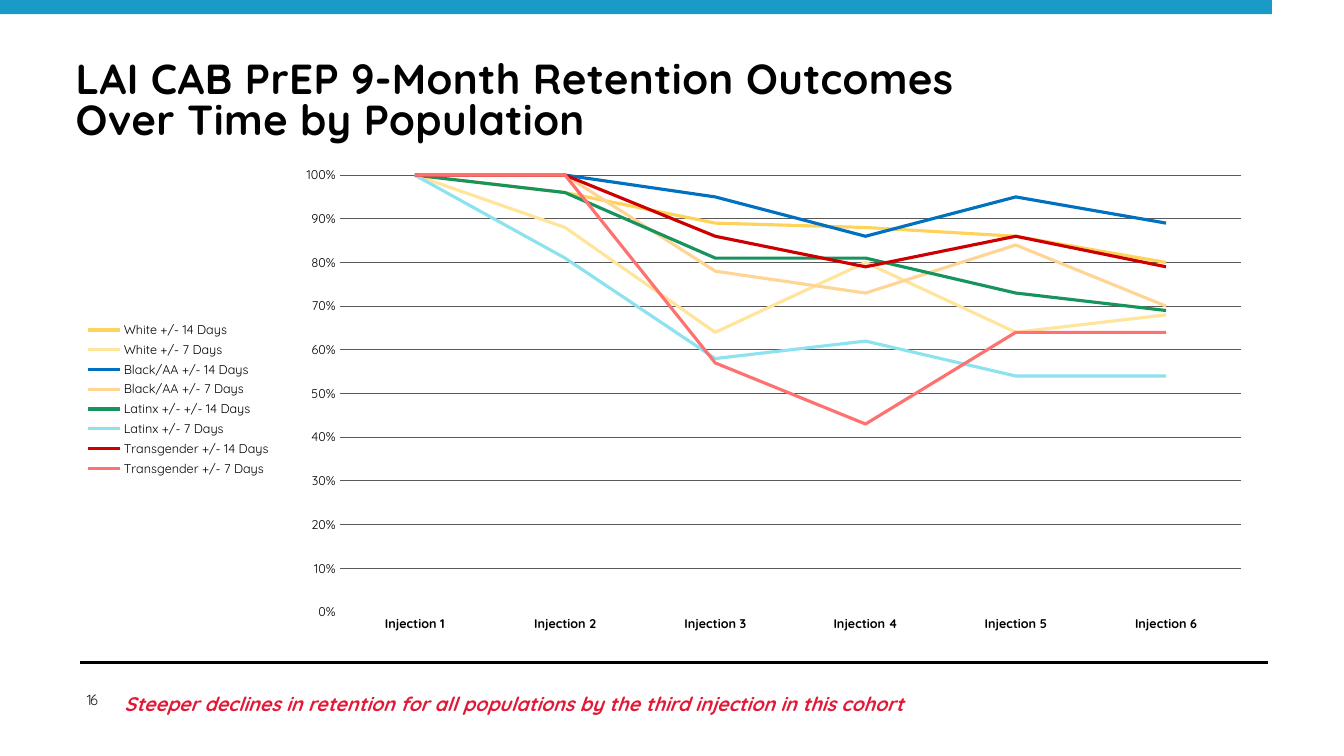
from lxml import etree
from pptx import Presentation
from pptx import util as u
from pptx.chart.data import CategoryChartData
from pptx.dml.color import RGBColor
from pptx.enum import chart as charts, shapes, text
from pptx.oxml import parse_xml
from pptx.oxml.ns import nsdecls, qn

FONT = "Quicksand"
BLACK = RGBColor(0x00, 0x00, 0x00)
WHITE = RGBColor(0xFF, 0xFF, 0xFF)
BAR_BLUE = RGBColor(0x1A, 0x9A, 0xC7)
NUMBER_GREY = RGBColor(0x1F, 0x1F, 0x1F)
GRID_GREY = RGBColor(0x59, 0x59, 0x59)
MESSAGE_RED = RGBColor(0xE3, 0x18, 0x36)
GOLD = RGBColor(0xFF, 0xD3, 0x59)
PALE_GOLD = RGBColor(0xFF, 0xE5, 0x9B)
BLUE = RGBColor(0x00, 0x70, 0xC0)
PEACH = RGBColor(0xFF, 0xD5, 0x96)
GREEN = RGBColor(0x17, 0x93, 0x5E)
AQUA = RGBColor(0x8D, 0xE2, 0xEF)
RED = RGBColor(0xCC, 0x00, 0x00)
CORAL = RGBColor(0xFF, 0x71, 0x71)

RETENTION = [
    ("White +/- 14 Days", GOLD, (1, 0.96, 0.89, 0.88, 0.86, 0.8)),
    ("White +/- 7 Days", PALE_GOLD, (1, 0.88, 0.64, 0.8, 0.64, 0.68)),
    ("Black/AA +/- 14 Days", BLUE, (1, 1, 0.95, 0.86, 0.95, 0.89)),
    ("Black/AA +/- 7 Days", PEACH, (1, 1, 0.78, 0.73, 0.84, 0.7)),
    ("Latinx +/- +/- 14 Days", GREEN, (1, 0.96, 0.81, 0.81, 0.73, 0.69)),
    ("Latinx +/- 7 Days", AQUA, (1, 0.81, 0.58, 0.62, 0.54, 0.54)),
    ("Transgender +/- 14 Days", RED, (1, 1, 0.86, 0.79, 0.86, 0.79)),
    ("Transgender +/- 7 Days", CORAL, (1, 1, 0.57, 0.43, 0.64, 0.64)),
]


def style_font(font, size, color, bold=False, italic=False):
    font.name = FONT
    font.size = u.Pt(size)
    font.color.rgb = color
    font.bold = bold
    font.italic = italic


def add_text(page, words, left, top, width, height, inset_top=0):
    box = page.shapes.add_textbox(u.Pt(left), u.Pt(top), u.Pt(width), u.Pt(height))
    frame = box.text_frame
    frame.word_wrap = True
    frame.margin_left = frame.margin_right = frame.margin_bottom = u.Pt(0)
    frame.margin_top = u.Pt(inset_top)
    para = frame.paragraphs[0]
    para.text = words
    return frame, para


deck = Presentation()
deck.slide_width, deck.slide_height = u.Pt(960), u.Pt(540)
page = deck.slides.add_slide(deck.slide_layouts[6])

# Top bar
bar = page.shapes.add_shape(
    shapes.MSO_SHAPE.RECTANGLE, u.Pt(0), u.Pt(0), u.Pt(908.6), u.Pt(10.1))
bar.shadow.inherit = False
bar.fill.solid()
bar.fill.fore_color.rgb = BAR_BLUE
bar.line.fill.background()

# Footer rule
rule = page.shapes.add_connector(
    shapes.MSO_CONNECTOR.STRAIGHT, u.Pt(57), u.Pt(473), u.Pt(906), u.Pt(473))
rule.line.color.rgb = BLACK
rule.line.width = u.Pt(2)
etree.SubElement(rule._element.spPr, qn("a:effectLst"))

# Slide number
frame, para = add_text(page, "16", 57, 490.3, 18, 18.7)
frame.word_wrap = False
frame.vertical_anchor = text.MSO_ANCHOR.MIDDLE
para.alignment = text.PP_ALIGN.CENTER
style_font(para.font, 10.5, NUMBER_GREY)
para.runs[0]._r.get_or_add_rPr().set("spc", "-100")

# Title
frame, para = add_text(
    page, "LAI CAB PrEP 9-Month Retention Outcomes\vOver Time by Population",
    54, 36.7, 852, 83.5, inset_top=7.2)
para.line_spacing = u.Pt(29.3)
style_font(para.font, 30, BLACK, bold=True)
for span in para.runs:
    span._r.get_or_add_rPr().set("spc", "30")

# Key message
frame, para = add_text(
    page, "Steeper declines in retention for all populations by the third injection in this cohort",
    88.8, 491, 727, 24.5, inset_top=3.6)
style_font(para.font, 14, MESSAGE_RED, bold=True, italic=True)

# Retention chart
data = CategoryChartData(number_format="0%")
data.categories = [f"Injection {number}" for number in range(1, 7)]
for name, color, values in RETENTION:
    data.add_series(name, values)
chart = page.shapes.add_chart(
    charts.XL_CHART_TYPE.LINE, u.Pt(54), u.Pt(112.3), u.Pt(849.6), u.Pt(345.6), data).chart
chart.has_title = False
style_font(chart.font, 10, BLACK)
chart.plots[0].vary_by_categories = False
for series, (name, color, values) in zip(chart.plots[0].series, RETENTION):
    series.smooth = False
    series.marker.style = charts.XL_MARKER_STYLE.NONE
    series.format.line.color.rgb = color
    series.format.line.width = u.Pt(2.25)

# Legend
chart.has_legend = True
chart.legend.position = charts.XL_LEGEND_POSITION.LEFT
chart.legend.include_in_layout = False
style_font(chart.legend.font, 9, BLACK)

# Axes
injections, share = chart.category_axis, chart.value_axis
for axis in (injections, share):
    axis.major_tick_mark = axis.minor_tick_mark = charts.XL_TICK_MARK.NONE
    style_font(axis.tick_labels.font, 9, BLACK, bold=axis is injections)
injections.format.line.color.rgb = WHITE
injections.format.line.width = u.Pt(0.75)
share.minimum_scale, share.maximum_scale, share.major_unit = 0, 1, 0.1
share.tick_labels.number_format = "0%"
share.tick_labels.number_format_is_linked = False
share.format.line.fill.background()
share.has_major_gridlines = True
share.major_gridlines.format.line.color.rgb = GRID_GREY
share.major_gridlines.format.line.width = u.Pt(0.75)

# Plot area, as fractions of the chart
plot_area = chart._chartSpace.chart.plotArea
for layout in plot_area.findall(qn("c:layout")):
    plot_area.remove(layout)
plot_area.insert(0, parse_xml(
    f'<c:layout {nsdecls("c")}><c:manualLayout><c:layoutTarget val="inner"/>'
    '<c:xMode val="edge"/><c:yMode val="edge"/><c:x val="0.222"/><c:y val="0.037"/>'
    '<c:w val="0.758"/><c:h val="0.903"/></c:manualLayout></c:layout>'))

deck.save("out.pptx")
